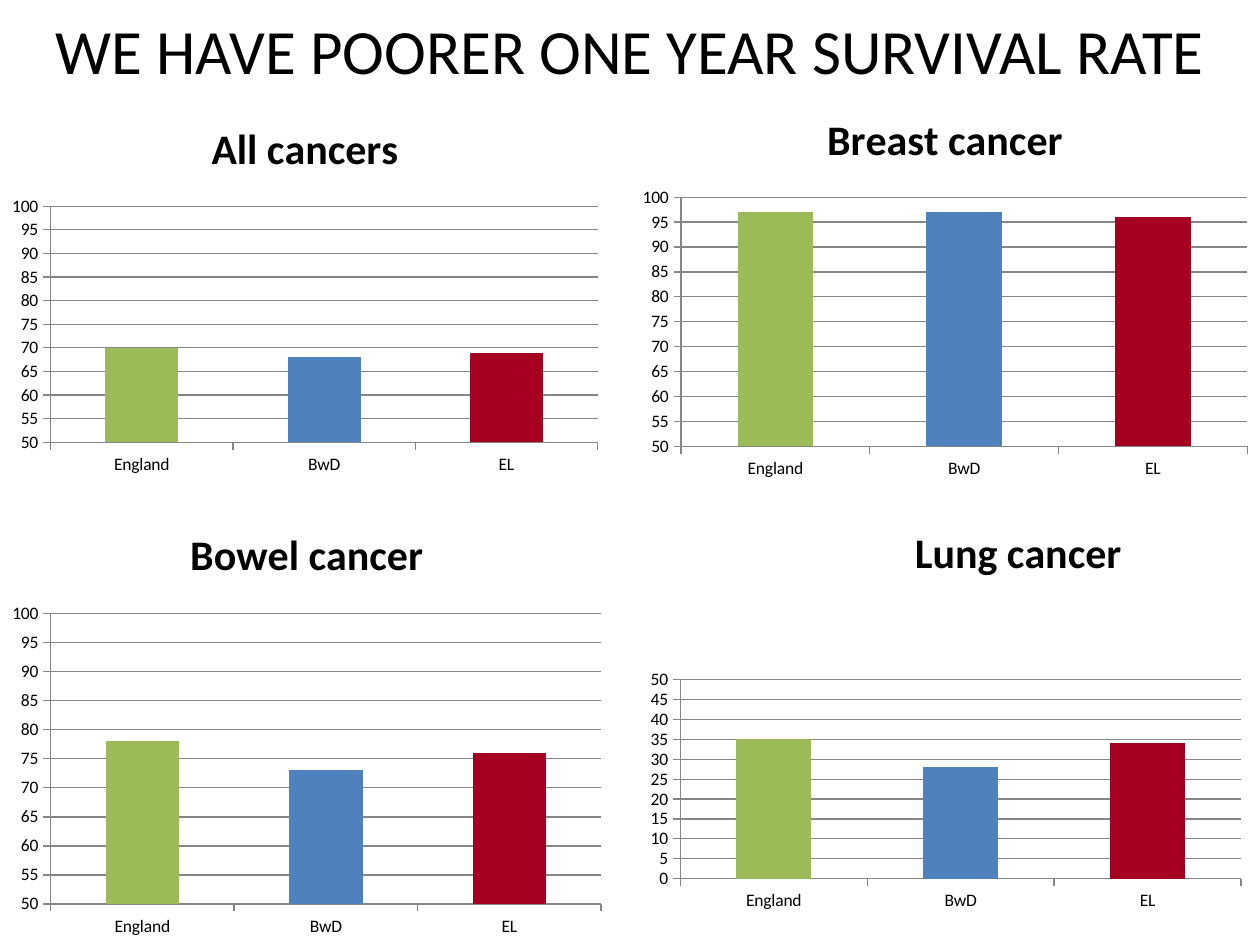
from dataclasses import dataclass

from lxml.etree import SubElement
from pptx import Presentation
from pptx.chart.data import CategoryChartData
from pptx.dml.color import RGBColor
from pptx.enum.chart import XL_CHART_TYPE, XL_TICK_MARK
from pptx.enum.text import MSO_ANCHOR, PP_ALIGN
from pptx.oxml.ns import qn
from pptx.util import Pt


@dataclass(frozen=True)
class Theme:
    font: str = "Calibri"
    text: RGBColor = RGBColor(0, 0, 0)
    axis: RGBColor = RGBColor(0x86, 0x86, 0x86)
    bars: tuple = (
        RGBColor(0x9B, 0xBB, 0x59),
        RGBColor(0x4F, 0x81, 0xBD),
        RGBColor(0xA5, 0x00, 0x21),
    )
    heading: int = 36
    chart_title: int = 24
    label: int = 10


THEME = Theme()
AREAS = ("England", "BwD", "EL")
LUNG_PLOT = {"x": 0.08, "y": 0.4, "w": 0.89, "h": 0.45}
LUNG_TITLE = {"x": 0.44, "y": 0.03}

# title, box in points, survival by area, axis range, plot place, title place
CHARTS = (
    ("All cancers", (0, 56, 348.5, 219.5), (70, 68, 69), (50, 100), None, None),
    ("Breast cancer", (360, 50.5, 360, 227.5), (97, 97, 96), (50, 100), None, None),
    ("Bowel cancer", (0, 287.5, 350.5, 252.5), (78, 73, 76), (50, 100), None, None),
    ("Lung cancer", (360, 287.5, 360, 252.5), (35, 28, 34), (0, 50),
     LUNG_PLOT, LUNG_TITLE),
)


def style_font(font, size, bold=False):
    font.name = THEME.font
    font.size = Pt(size)
    font.bold = bold
    font.color.rgb = THEME.text


def set_layout(parent, index, place, inner=False):
    """Place a chart part by fractions of the chart's size."""
    old = parent.find(qn("c:layout"))
    if old is not None:
        parent.remove(old)
    layout = SubElement(parent, qn("c:layout"))
    parent.insert(index, layout)
    manual = SubElement(layout, qn("c:manualLayout"))
    if inner:
        SubElement(manual, qn("c:layoutTarget")).set("val", "inner")
    for key in ("x", "y"):
        SubElement(manual, qn(f"c:{key}Mode")).set("val", "edge")
    for key, value in place.items():
        SubElement(manual, qn(f"c:{key}")).set("val", str(value))


def add_heading(slide, text, box):
    tf = slide.shapes.add_textbox(*map(Pt, box)).text_frame
    tf.word_wrap = True
    tf.vertical_anchor = MSO_ANCHOR.MIDDLE
    tf.text = text
    p = tf.paragraphs[0]
    p.alignment = PP_ALIGN.CENTER
    style_font(p.runs[0].font, THEME.heading)


def style_axes(chart, limits):
    value_axis = chart.value_axis
    value_axis.minimum_scale, value_axis.maximum_scale = limits
    value_axis.major_unit = 5
    value_axis.has_major_gridlines = True
    for axis in (chart.category_axis, value_axis):
        axis.major_tick_mark = XL_TICK_MARK.OUTSIDE
        axis.minor_tick_mark = XL_TICK_MARK.NONE
    for part in (chart.category_axis, value_axis, value_axis.major_gridlines):
        part.format.line.color.rgb = THEME.axis
        part.format.line.width = Pt(0.75)


def add_survival_chart(slide, title, box, rates, limits, plot_place, title_place):
    data = CategoryChartData()
    data.categories = AREAS
    data.add_series("Series 1", rates)
    chart = slide.shapes.add_chart(
        XL_CHART_TYPE.COLUMN_CLUSTERED, *map(Pt, box), data).chart
    style_font(chart.font, THEME.label)
    chart.has_legend = False
    chart.has_title = True
    tf = chart.chart_title.text_frame
    tf.text = title
    style_font(tf.paragraphs[0].runs[0].font, THEME.chart_title, bold=True)
    style_axes(chart, limits)

    plot = chart.plots[0]
    plot.gap_width = 150
    plot.vary_by_categories = False
    for i, color in enumerate(THEME.bars):
        fill = plot.series[0].points[i].format.fill
        fill.solid()
        fill.fore_color.rgb = color

    chart_xml = chart.element.find(qn("c:chart"))
    if plot_place:
        set_layout(chart_xml.find(qn("c:plotArea")), 0, plot_place, inner=True)
    if title_place:
        set_layout(chart_xml.find(qn("c:title")), 1, title_place)


def main():
    prs = Presentation()
    prs.slide_width, prs.slide_height = Pt(720), Pt(540)
    slide = prs.slides.add_slide(prs.slide_layouts[6])
    add_heading(slide, "WE HAVE POORER ONE YEAR SURVIVAL RATE", (0, 0, 720, 56))
    for chart in CHARTS:
        add_survival_chart(slide, *chart)
    prs.save("out.pptx")


if __name__ == "__main__":
    main()
